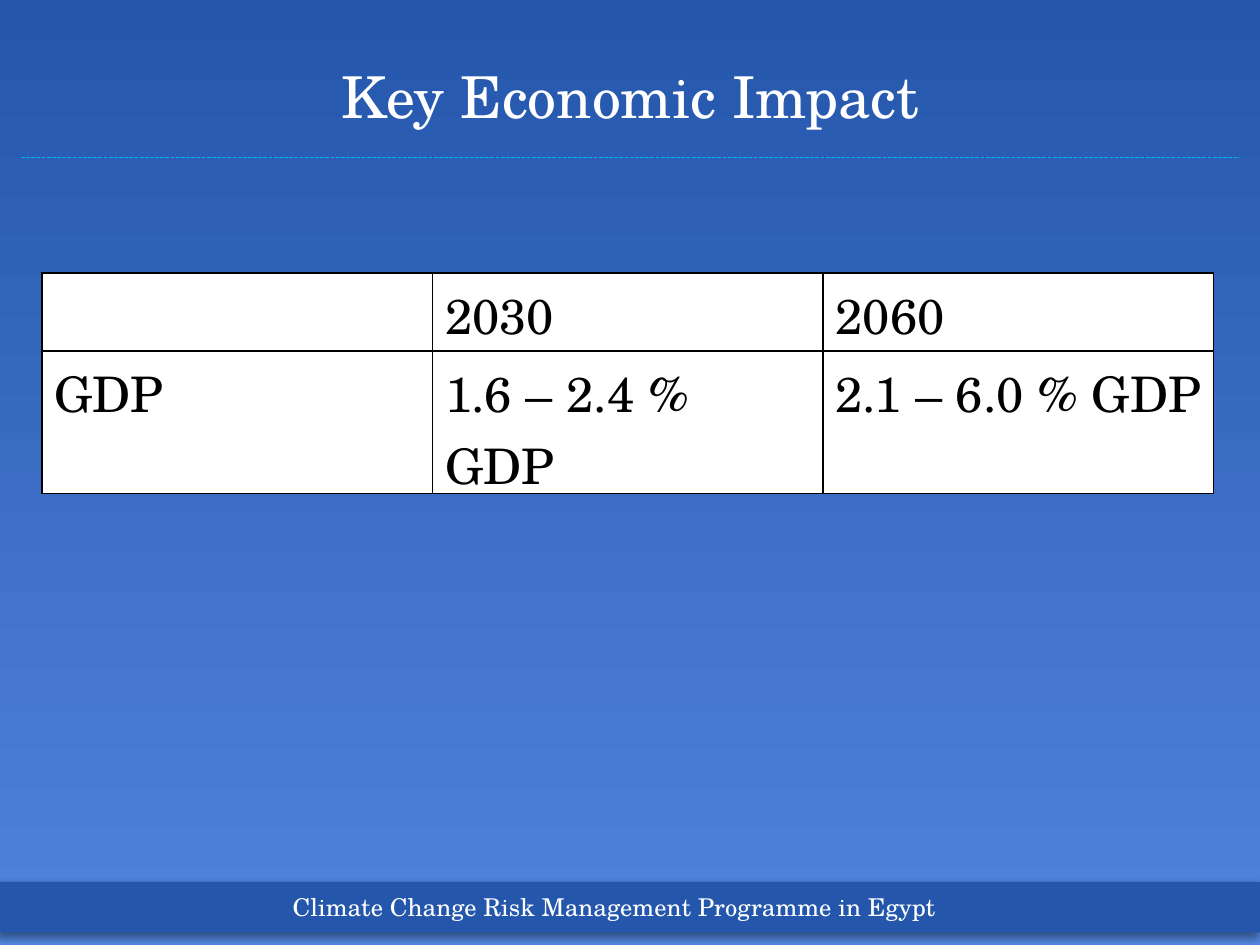
"""Build the Key Economic Impact slide with its GDP table."""
from dataclasses import dataclass

from lxml import etree
from pptx import Presentation
from pptx.dml.color import RGBColor
from pptx.enum import dml, shapes, text
from pptx.oxml.ns import qn
from pptx.util import Pt

COLORS = {
    "deep": "2457AB",
    "light": "5084DA",
    "rule": "00B0F0",
    "white": "FFFFFF",
    "black": "000000",
}
FONT = "TeX Gyre Schola"
COLUMN_WIDTH = 223.2
ROW_HEIGHTS = (44.64, 81.36)
ROWS = (
    ("", "2030", "2060"),
    ("GDP", "1.6 – 2.4 % GDP", "2.1 – 6.0 % GDP"),
)


@dataclass(frozen=True)
class Area:
    """Position and size in points."""

    left: float
    top: float
    width: float
    height: float

    def lengths(self) -> tuple:
        """Return the four values as lengths."""
        return Pt(self.left), Pt(self.top), Pt(self.width), Pt(self.height)


def rgb(name: str) -> RGBColor:
    """Look up a named colour."""
    return RGBColor.from_string(COLORS[name])


def style(para, size: float, color: str, align=text.PP_ALIGN.LEFT) -> None:
    """Set the font and alignment of a paragraph."""
    para.alignment = align
    para.font.name = FONT
    para.font.size = Pt(size)
    para.font.color.rgb = rgb(color)


def add_shadow(item) -> None:
    """Give a shape or line a soft lower-left shadow."""
    effects = etree.SubElement(item._element.spPr, qn("a:effectLst"))
    shadow = etree.SubElement(
        effects, qn("a:outerShdw"), blurRad=str(Pt(4)), dist=str(Pt(3)),
        dir="8100000", algn="tr", rotWithShape="0")
    color = etree.SubElement(shadow, qn("a:srgbClr"), val=COLORS["black"])
    etree.SubElement(color, qn("a:alpha"), val="40000")


def add_border(cell) -> None:
    """Draw a thin black line on each side of a cell."""
    properties = cell._tc.get_or_add_tcPr()
    for index, side in enumerate(("lnL", "lnR", "lnT", "lnB")):
        line = etree.Element(qn(f"a:{side}"), w=str(Pt(1)))
        fill = etree.SubElement(line, qn("a:solidFill"))
        etree.SubElement(fill, qn("a:srgbClr"), val=COLORS["black"])
        properties.insert(index, line)


def paint_background(page) -> None:
    """Fill the page with a downward blue gradient."""
    fill = page.background.fill
    fill.gradient()
    fill.gradient_angle = 270
    for stop, position, color in zip(fill.gradient_stops, (0, 1), ("deep", "light")):
        stop.position = position
        stop.color.rgb = rgb(color)


def add_title(page, area: Area, words: str) -> None:
    """Place and format the title placeholder."""
    title = page.shapes.title
    title.left, title.top, title.width, title.height = area.lengths()
    title.text_frame.text = words
    title.text_frame.vertical_anchor = text.MSO_ANCHOR.BOTTOM
    style(title.text_frame.paragraphs[0], 33, "white", text.PP_ALIGN.CENTER)


def add_rule(page, left: float, right: float, top: float) -> None:
    """Draw the dashed line under the title."""
    rule = page.shapes.add_connector(
        shapes.MSO_CONNECTOR.STRAIGHT, Pt(left), Pt(top), Pt(right), Pt(top))
    rule.line.color.rgb = rgb("rule")
    rule.line.width = Pt(0.75)
    rule.line.dash_style = dml.MSO_LINE.SQUARE_DOT
    add_shadow(rule)


def add_footer(page, band_area: Area, text_area: Area, words: str) -> None:
    """Draw the footer band and its caption."""
    band = page.shapes.add_shape(shapes.MSO_SHAPE.RECTANGLE, *band_area.lengths())
    band.fill.solid()
    band.fill.fore_color.rgb = rgb("deep")
    band.line.fill.background()
    add_shadow(band)
    box = page.shapes.add_textbox(*text_area.lengths())
    box.text_frame.word_wrap = True
    box.text_frame.text = words
    style(box.text_frame.paragraphs[0], 14, "white", text.PP_ALIGN.CENTER)


def add_impact_table(page, left: float, top: float) -> None:
    """Add the table of GDP impact by year."""
    area = Area(left, top, COLUMN_WIDTH * len(ROWS[0]), sum(ROW_HEIGHTS))
    table = page.shapes.add_table(len(ROWS), len(ROWS[0]), *area.lengths()).table
    table.first_row = table.horz_banding = False
    for row, height, values in zip(table.rows, ROW_HEIGHTS, ROWS):
        row.height = Pt(height)
        for cell, value in zip(row.cells, values):
            cell.text = value
            cell.fill.solid()
            cell.fill.fore_color.rgb = rgb("white")
            style(cell.text_frame.paragraphs[0], 28, "black")
            add_border(cell)


def main() -> None:
    """Assemble and save the deck."""
    deck = Presentation()
    deck.slide_width, deck.slide_height = Pt(720), Pt(540)
    page = deck.slides.add_slide(deck.slide_layouts[5])
    paint_background(page)
    add_title(page, Area(24, 18, 672, 60), "Key Economic Impact")
    add_rule(page, 12, 708, 90)
    add_footer(page, Area(0, 504, 720, 28.8), Area(126, 506, 450, 24.5),
               "Climate Change Risk Management Programme in Egypt")
    add_impact_table(page, 24, 156)
    deck.save("out.pptx")


if __name__ == "__main__":
    main()
